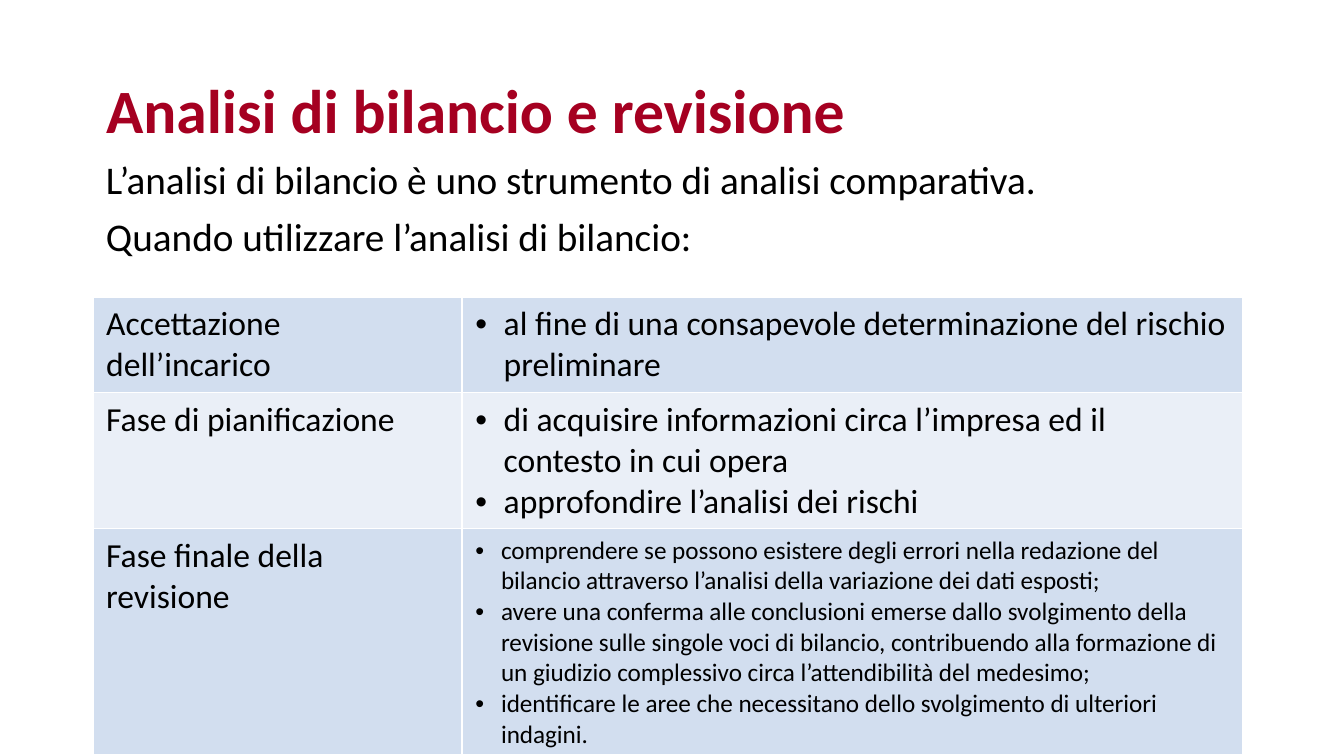
import pptx
import pptx.util
import pptx.dml.color
import pptx.enum.text
import pptx.oxml.ns
import lxml.etree

Inches, Pt = pptx.util.Inches, pptx.util.Pt
WIDE = 10
HIGH = WIDE * 9 / 16
LEFT, SPAN = 0.069 * WIDE, 0.862 * WIDE
FONT = "Calibri"
HUES = {"title": "A50021", "text": "000000", "white": "FFFFFF",
        "dark": "D2DEEF", "light": "EAEFF7"}

TITLE = "Analisi di bilancio e revisione"
INTRO = ["L’analisi di bilancio è uno strumento di analisi comparativa.",
         "Quando utilizzare l’analisi di bilancio:"]
# phase, goals, size of the goals, bullet indent, row height
PHASES = [
    ("Accettazione dell’incarico",
     ["al fine di una consapevole determinazione del rischio preliminare"],
     18, 0.21, 0.32),
    ("Fase di pianificazione",
     ["di acquisire informazioni circa l’impresa ed il contesto in cui opera",
      "approfondire l’analisi dei rischi"],
     18, 0.21, 0.57),
    ("Fase finale della revisione",
     ["comprendere se possono esistere degli errori nella redazione del "
      "bilancio attraverso l’analisi della variazione dei dati esposti;",
      "avere una conferma alle conclusioni emerse dallo svolgimento della "
      "revisione sulle singole voci di bilancio, contribuendo alla formazione "
      "di un giudizio complessivo circa l’attendibilità del medesimo;",
      "identificare le aree che necessitano dello svolgimento di ulteriori "
      "indagini."],
     13.5, 0.19, 1.19),
]


def color(name):
    return pptx.dml.color.RGBColor.from_string(HUES[name])


def add_xml(parent, tag, **attrs):
    return lxml.etree.SubElement(parent, pptx.oxml.ns.qn(tag), attrs)


def style(par, size, hue="text", bold=False):
    par.alignment = pptx.enum.text.PP_ALIGN.LEFT
    par.font.name, par.font.size, par.font.bold = FONT, Pt(size), bold
    par.font.color.rgb = color(hue)


def write(frame, lines, size, indent=0):
    """Fill a frame with one paragraph a line, bulleted if indented."""
    for i, line in enumerate(lines):
        par = frame.add_paragraph() if i else frame.paragraphs[0]
        par.text = line
        if indent:
            props = par._p.get_or_add_pPr()
            props.set("marL", str(Inches(indent)))
            props.set("indent", str(-Inches(indent)))
            add_xml(props, "a:buFont", typeface="Arial")
            add_xml(props, "a:buChar", char="•")
        style(par, size)


def draw_title(slide, box):
    title = slide.shapes.title
    title.left, title.top, title.width, title.height = map(Inches, box)
    title.fill.solid()
    title.fill.fore_color.rgb = color("white")
    tint = title._element.spPr.find(".//" + pptx.oxml.ns.qn("a:srgbClr"))
    add_xml(tint, "a:alpha", val="20000")
    frame = title.text_frame
    frame.text = TITLE
    frame.vertical_anchor = pptx.enum.text.MSO_ANCHOR.MIDDLE
    frame.paragraphs[0].line_spacing = 0.9
    style(frame.paragraphs[0], 33, "title", True)


def draw_intro(slide, box):
    frame = slide.shapes.add_textbox(*map(Inches, box)).text_frame
    frame.word_wrap = True
    write(frame, INTRO, 21)
    for i, par in enumerate(frame.paragraphs):
        par.line_spacing = 0.9
        par.space_before = Pt(7.5 if i else 0)


def paint(cell, hue):
    """Give a cell thin white borders and a plain fill."""
    props = cell._tc.get_or_add_tcPr()
    for side in "LRTB":
        line = add_xml(props, "a:ln" + side, w=str(Pt(1)))
        fill = add_xml(line, "a:solidFill")
        add_xml(fill, "a:srgbClr", val=HUES["white"])
    cell.fill.solid()
    cell.fill.fore_color.rgb = color(hue)


def draw_table(slide, box):
    holder = slide.shapes.add_table(len(PHASES), 2, *map(Inches, box))
    table = holder.table
    table.first_row = table.horz_banding = False
    for col, share in zip(table.columns, (0.321, 0.679)):
        col.width = Inches(box[2] * share)
    for i, (phase, goals, size, indent, height) in enumerate(PHASES):
        table.rows[i].height = Inches(height)
        name, text = table.rows[i].cells
        write(name.text_frame, [phase], 18)
        write(text.text_frame, goals, size, indent)
        for cell in (name, text):
            cell.margin_bottom = Inches(0.06)
            paint(cell, "light" if i % 2 else "dark")
    holder.height = Inches(box[3])


def main():
    deck = pptx.Presentation()
    deck.slide_width, deck.slide_height = Inches(WIDE), Inches(HIGH)
    slide = deck.slides.add_slide(deck.slide_layouts[5])
    draw_title(slide, (LEFT, 0.053 * HIGH, SPAN, 0.194 * HIGH))
    draw_intro(slide, (LEFT, 0.204 * HIGH, SPAN, 0.171 * HIGH))
    draw_table(slide, (LEFT, 0.393 * HIGH, 0.856 * WIDE, 0.457 * HIGH))
    deck.save("out.pptx")


if __name__ == "__main__":
    main()
